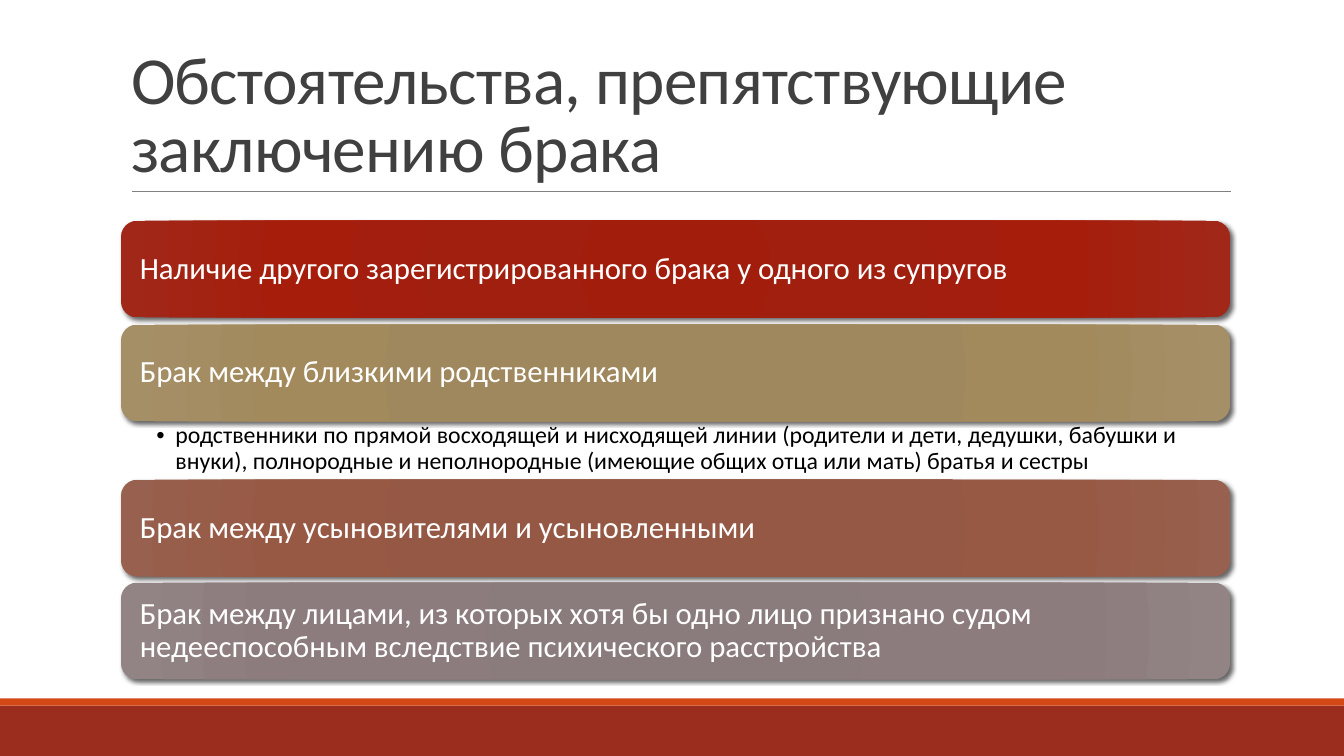
from lxml.etree import SubElement
from pptx import Presentation
from pptx.dml.color import RGBColor
from pptx.enum.shapes import MSO_CONNECTOR, MSO_SHAPE
from pptx.enum.text import MSO_ANCHOR, MSO_AUTO_SIZE, PP_ALIGN
from pptx.oxml import parse_xml
from pptx.oxml.ns import nsdecls, qn
from pptx.util import Inches, Pt

WHITE = RGBColor(0xFF, 0xFF, 0xFF)
BLACK = RGBColor(0x00, 0x00, 0x00)
DARK = RGBColor(0x40, 0x40, 0x40)
GREY = RGBColor(0x80, 0x80, 0x80)
BRICK = RGBColor(0x9B, 0x2D, 0x1F)
ORANGE = RGBColor(0xD3, 0x48, 0x17)

LEFT, WIDE, TALL = 1.2, 11, 0.96
STOPS = (0, 34, 70, 100)
CARDS = (
    (2.19, "Наличие другого зарегистрированного брака у одного из супругов",
     ("A21D0C", "A01F0F", "A61D0C", "A12819")),
    (3.22, "Брак между близкими родственниками",
     ("9F875B", "9F885D", "A38A5D", "A58F67")),
    (4.76, "Брак между усыновителями и усыновленными",
     ("945742", "945844", "985944", "98604E")),
    (5.78, "Брак между лицами, из которых хотя бы одно лицо признано судом "
           "недееспособным вследствие психического расстройства",
     ("89797A", "8A7B7C", "8C7C7D", "928384")),
)
KIN = ("родственники по прямой восходящей и нисходящей линии (родители и дети, "
       "дедушки, бабушки и внуки), полнородные и неполнородные (имеющие общих "
       "отца или мать) братья и сестры")


def apply(item, style):
    for name, value in style.items():
        setattr(item, name, value)


class Page:
    font = "Calibri"

    def __init__(self, deck):
        self.slide = deck.slides.add_slide(deck.slide_layouts[1])
        self.shapes = self.slide.shapes

    def place(self, shape, x, y, w, h):
        apply(shape, {"left": Inches(x), "top": Inches(y),
                      "width": Inches(w), "height": Inches(h)})

    def label(self, shape, text, size, color, pads, anchor, space=0.9):
        frame = shape.text_frame
        frame.text = text
        sides = ("margin_left", "margin_top", "margin_right", "margin_bottom")
        apply(frame, dict(zip(sides, map(Inches, pads))))
        apply(frame, {"word_wrap": True, "auto_size": MSO_AUTO_SIZE.NONE,
                      "vertical_anchor": anchor})
        para = frame.paragraphs[0]
        apply(para, {"alignment": PP_ALIGN.LEFT, "line_spacing": space,
                     "space_before": Pt(0)})
        run = para.runs[0]
        apply(run.font, {"name": self.font, "size": Pt(size)})
        run.font.color.rgb = color
        return para, run

    def title(self, text):
        shape = self.shapes.title
        self.place(shape, LEFT, 0.31, WIDE, 1.59)
        _, run = self.label(shape, text, 48, DARK, (0.1, 0.05, 0.1, 0.05),
                            MSO_ANCHOR.BOTTOM, 0.85)
        run._r.get_or_add_rPr().set("spc", "-50")

    def list(self, text):
        shape = self.slide.placeholders[1]
        self.place(shape, LEFT, 4.17, WIDE, 0.59)
        para, _ = self.label(shape, text, 17, BLACK, (0.35, 0.03, 0.17, 0.03),
                             MSO_ANCHOR.TOP)
        props = para._p.get_or_add_pPr()
        props.set("marL", str(Inches(0.19)))
        props.set("indent", str(Inches(-0.19)))
        SubElement(props, qn("a:buFont"), typeface="Arial")
        SubElement(props, qn("a:buChar"), char="•")

    def band(self, y, h, color):
        shape = self.shapes.add_shape(MSO_SHAPE.RECTANGLE, 0, Inches(y),
                                      Inches(13.33), Inches(h))
        shape.shadow.inherit = False
        shape.fill.solid()
        shape.fill.fore_color.rgb = color
        shape.line.fill.background()

    def rule(self, x, y, end):
        line = self.shapes.add_connector(MSO_CONNECTOR.STRAIGHT, Inches(x),
                                         Inches(y), Inches(end), Inches(y))
        line.line.color.rgb = GREY
        line.line.width = Pt(0.5)
        SubElement(line._element.spPr, qn("a:effectLst"))

    def card(self, y, text, tones):
        shape = self.shapes.add_shape(MSO_SHAPE.ROUNDED_RECTANGLE, Inches(LEFT),
                                      Inches(y), Inches(WIDE), Inches(TALL))
        shape.shadow.inherit = False
        shape.line.fill.background()
        stops = "".join(
            f'<a:gs pos="{stop * 1000}"><a:srgbClr val="{tone}"/></a:gs>'
            for stop, tone in zip(STOPS, tones))
        props = shape._element.spPr
        props.insert(2, parse_xml(
            f'<a:gradFill {nsdecls("a")} rotWithShape="1"><a:gsLst>{stops}</a:gsLst>'
            '<a:path path="circle"><a:fillToRect l="100000" t="100000" '
            'r="100000" b="100000"/></a:path></a:gradFill>'))
        props.find(qn("a:effectLst")).append(parse_xml(
            f'<a:outerShdw {nsdecls("a")} blurRad="{Pt(3)}" dist="{Pt(2)}" '
            'dir="2700000" rotWithShape="0"><a:srgbClr val="000000">'
            '<a:alpha val="60000"/></a:srgbClr></a:outerShdw>'))
        self.label(shape, text, 22, WHITE, (0.14,) * 4, MSO_ANCHOR.MIDDLE)


def main():
    deck = Presentation()
    apply(deck, {"slide_width": Inches(13.33), "slide_height": Inches(7.5)})
    page = Page(deck)
    page.band(7, 0.5, BRICK)
    page.band(6.93, 0.07, ORANGE)
    page.rule(1.31, 1.9, 12.21)
    page.title("Обстоятельства, препятствующие заключению брака")
    page.list(KIN)
    for y, text, tones in CARDS:
        page.card(y, text, tones)
    deck.save("out.pptx")


if __name__ == "__main__":
    main()
